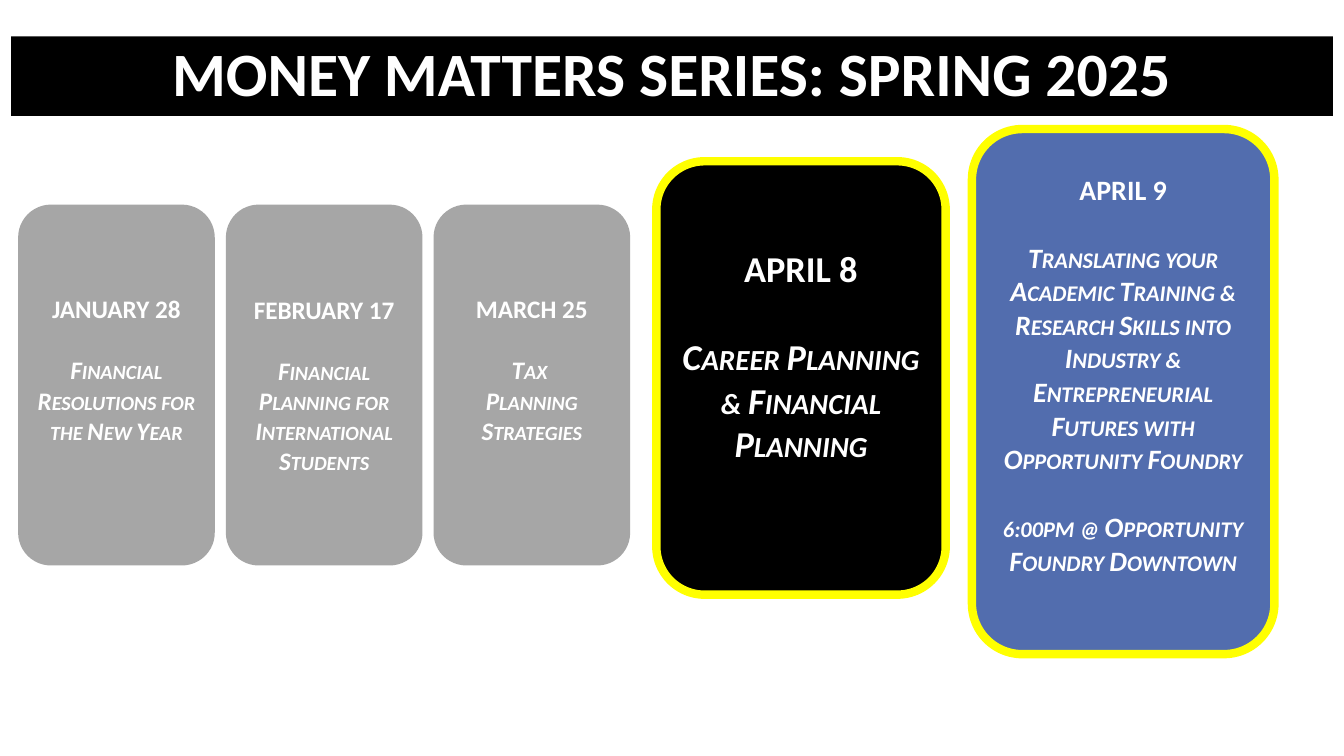
"""Builds the spring 2025 Money Matters series slide."""
from pptx import Presentation, util as u
from pptx.dml.color import RGBColor
from pptx.enum import shapes, text

PX = 9144
COLORS = {"black": "000000", "white": "FFFFFF", "gray": "A6A6A6",
          "blue": "526DAE", "yellow": "FFFF00"}


class SeriesSlide:
    """Holds the style and the slide being drawn."""

    font_name = "Calibri"
    line_height = 1.22

    def __init__(self, deck):
        self.slide = deck.slides.add_slide(deck.slide_layouts[6])

    def color(self, name):
        return RGBColor.from_string(COLORS[name])

    def panel(self, preset, box, fill, outline=None):
        panel = self.slide.shapes.add_shape(preset, *(u.Emu(n * PX) for n in box))
        panel.shadow.inherit = False
        panel.fill.solid()
        panel.fill.fore_color.rgb = self.color(fill)
        if outline:
            panel.line.color.rgb = self.color(outline)
            panel.line.width = u.Pt(6)
        else:
            panel.line.fill.background()
        frame = panel.text_frame
        frame.word_wrap = True
        frame.vertical_anchor = text.MSO_ANCHOR.MIDDLE
        return frame

    def wording(self, paragraph, words, size, topic=False):
        paragraph.text = words
        paragraph.alignment = text.PP_ALIGN.CENTER
        font = paragraph.font
        font.name = self.font_name
        font.size = u.Pt(size)
        font.bold = True
        font.italic = topic
        font.color.rgb = self.color("white")
        if topic:
            font._element.set("cap", "small")

    def banner(self, box, title):
        frame = self.panel(shapes.MSO_SHAPE.RECTANGLE, box, "black")
        heading = frame.paragraphs[0]
        self.wording(heading, title, 44)
        heading.line_spacing = 0.9

    def session(self, box, fill, size, date, topics, outline=None, raised=True):
        frame = self.panel(shapes.MSO_SHAPE.ROUNDED_RECTANGLE, box, fill, outline)
        gap = u.Pt(size * self.line_height)
        if raised:
            frame.margin_bottom += gap
        self.wording(frame.paragraphs[0], date, size)
        for topic in topics:
            paragraph = frame.add_paragraph()
            self.wording(paragraph, topic, size, topic=True)
            paragraph.space_before = gap


def main():
    deck = Presentation()
    deck.slide_width, deck.slide_height = u.Emu(1333 * PX), u.Emu(750 * PX)
    series = SeriesSlide(deck)
    series.banner((11, 36, 1311, 79), "MONEY MATTERS SERIES: SPRING 2025")

    past_sessions = [
        ("JANUARY 28", "Financial Resolutions for the New Year", True),
        ("FEBRUARY 17", "Financial Planning for International Students", False),
        ("MARCH 25", "Tax \vPlanning Strategies", True),
    ]
    for column, (date, topic, raised) in enumerate(past_sessions):
        series.session((18 + 206 * column, 203, 195, 358), "gray", 18,
                       date, [topic], raised=raised)

    series.session((651, 160, 287, 430), "black", 26, "APRIL 8",
                   ["Career Planning\v& Financial Planning"], "yellow")
    series.session((964, 128, 300, 521), "blue", 20, "APRIL 9",
                   ["Translating your Academic Training & Research Skills into "
                    "Industry & Entrepreneurial Futures with Opportunity Foundry",
                    "6:00pm @ Opportunity Foundry Downtown"], "yellow")
    deck.save("out.pptx")


if __name__ == "__main__":
    main()
